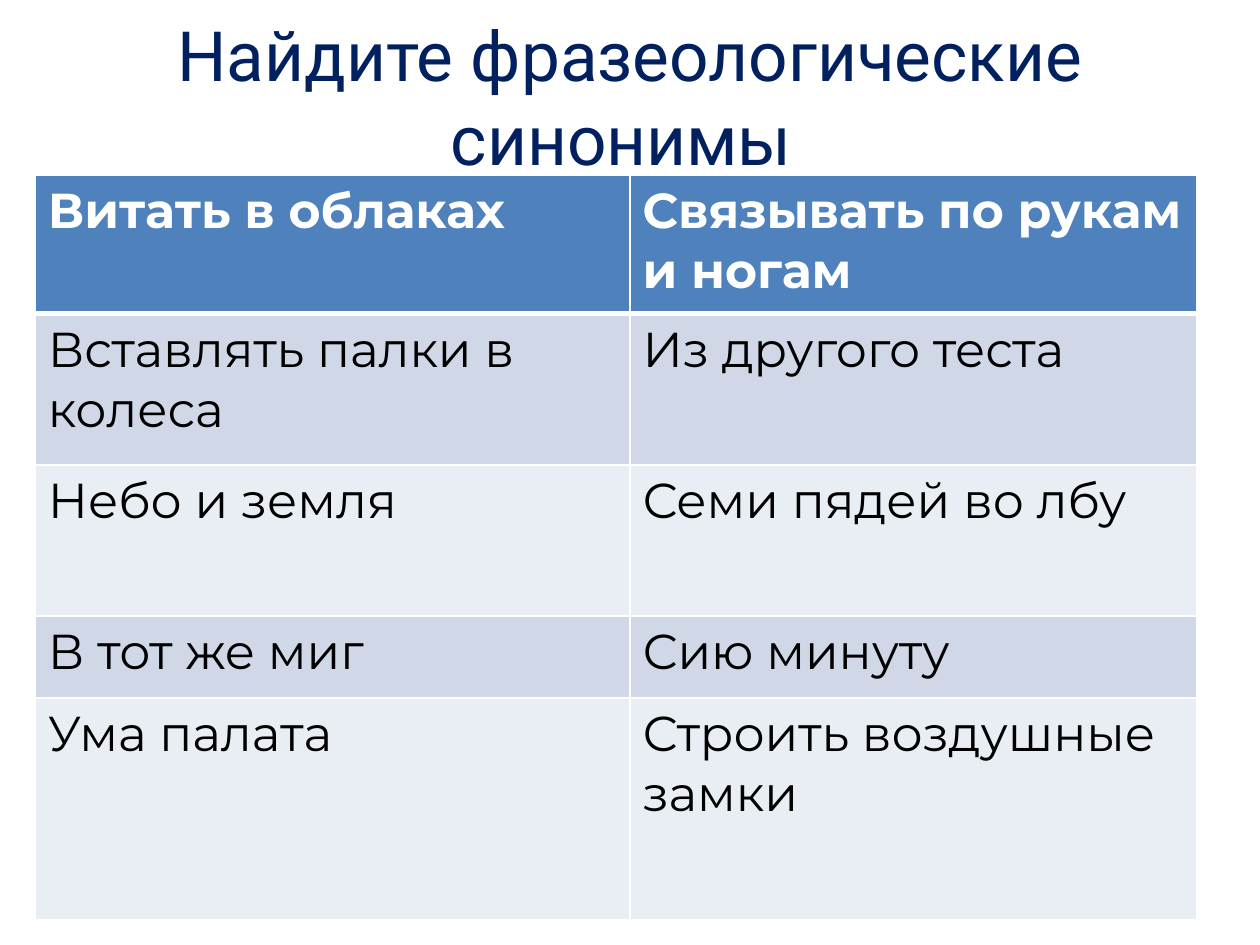
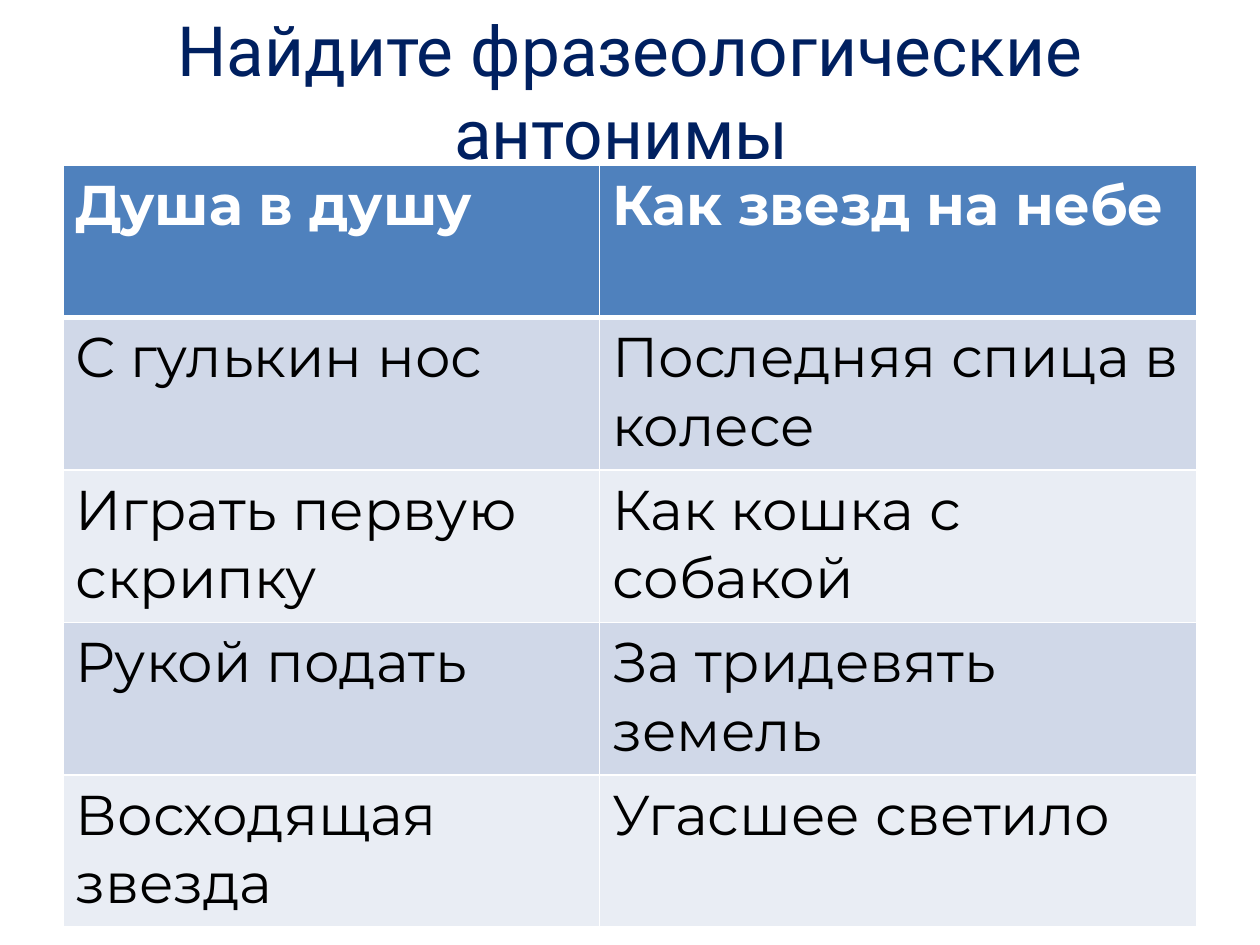
from lxml import etree
from pptx import Presentation
from pptx.dml.color import RGBColor
from pptx.enum import text
from pptx.oxml import ns
from pptx.util import Inches, Pt

NAVY = RGBColor(0x00, 0x20, 0x60)
BLUE = RGBColor(0x4F, 0x81, 0xBD)
BAND_DARK = RGBColor(0xD0, 0xD8, 0xE8)
BAND_LIGHT = RGBColor(0xE9, 0xED, 0xF4)
WHITE = RGBColor(0xFF, 0xFF, 0xFF)
BLACK = RGBColor(0x00, 0x00, 0x00)
TITLE_FONT = "Roboto"
TABLE_FONT = "Montserrat"

SLIDES = [
    {
        "title": "Найдите фразеологические синонимы ",
        "title_box": (0.5, 0.6, 9, 0.95),
        "title_bottom": 0.13,
        "table_at": (0.28, 1.39),
        "cols": [4.72, 4.5],
        "row_heights": [1.1, 1.2, 1.2, 0.65, 1.76],
        "size": 28,
        "phrases": [
            ("Витать в облаках", "Связывать по рукам и ногам"),
            ("Вставлять палки в колеса", "Из другого теста"),
            ("Небо и земля", "Семи пядей во лбу"),
            ("В тот же миг", "Сию минуту"),
            ("Ума палата", "Строить воздушные замки"),
        ],
    },
    {
        "title": "Найдите фразеологические антонимы ",
        "title_box": (0.5, 0.52, 9, 1.03),
        "title_bottom": 0.17,
        "table_at": (0.5, 1.31),
        "cols": [4.26, 4.74],
        "row_heights": [1.21] * 5,
        "size": 32,
        "phrases": [
            ("Душа в душу", "Как звезд на небе"),
            ("С гулькин нос", "Последняя спица в колесе"),
            ("Играть первую скрипку", "Как кошка с собакой"),
            ("Рукой подать", "За тридевять земель"),
            ("Восходящая звезда", "Угасшее светило"),
        ],
    },
]


def set_title(slide, content):
    sp = slide.shapes.title
    sp.left, sp.top, sp.width, sp.height = map(Inches, content["title_box"])
    tf = sp.text_frame
    tf.text = content["title"]
    tf.word_wrap = True
    tf.auto_size = text.MSO_AUTO_SIZE.NONE
    tf.vertical_anchor = text.MSO_ANCHOR.BOTTOM
    tf.margin_bottom = Inches(content["title_bottom"])
    p = tf.paragraphs[0]
    p.alignment = text.PP_ALIGN.CENTER
    p.font.name = TITLE_FONT
    p.font.size = Pt(39.6)
    p.font.color.rgb = NAVY


def set_borders(cell, row):
    widths = {"lnL": 1, "lnR": 1, "lnT": 3 if row == 1 else 1, "lnB": 3 if row == 0 else 1}
    tc_pr = cell._tc.get_or_add_tcPr()
    for side, width in widths.items():
        ln = etree.SubElement(tc_pr, ns.qn(f"a:{side}"), w=str(Pt(width)))
        fill = etree.SubElement(ln, ns.qn("a:solidFill"))
        etree.SubElement(fill, ns.qn("a:srgbClr"), val=str(WHITE))


def fill_cell(cell, phrase, row, size):
    header = row == 0
    set_borders(cell, row)
    cell.fill.solid()
    cell.fill.fore_color.rgb = BLUE if header else BAND_DARK if row % 2 else BAND_LIGHT
    cell.text = phrase
    font = cell.text_frame.paragraphs[0].font
    font.name = TABLE_FONT
    font.size = Pt(size)
    font.bold = header
    font.color.rgb = WHITE if header else BLACK


def add_phrase_table(slide, content):
    cols, heights = content["cols"], content["row_heights"]
    left, top = content["table_at"]
    table = slide.shapes.add_table(
        len(heights), len(cols), Inches(left), Inches(top),
        Inches(sum(cols)), Inches(sum(heights))).table
    for column, width in zip(table.columns, cols):
        column.width = Inches(width)
    for i, (height, phrases) in enumerate(zip(heights, content["phrases"])):
        table.rows[i].height = Inches(height)
        for j, phrase in enumerate(phrases):
            fill_cell(table.cell(i, j), phrase, i, content["size"])


def main():
    prs = Presentation()
    prs.slide_width, prs.slide_height = Inches(10), Inches(7.5)
    title_only = prs.slide_layouts[5]
    for content in SLIDES:
        slide = prs.slides.add_slide(title_only)
        set_title(slide, content)
        add_phrase_table(slide, content)
    prs.save("out.pptx")


if __name__ == "__main__":
    main()
